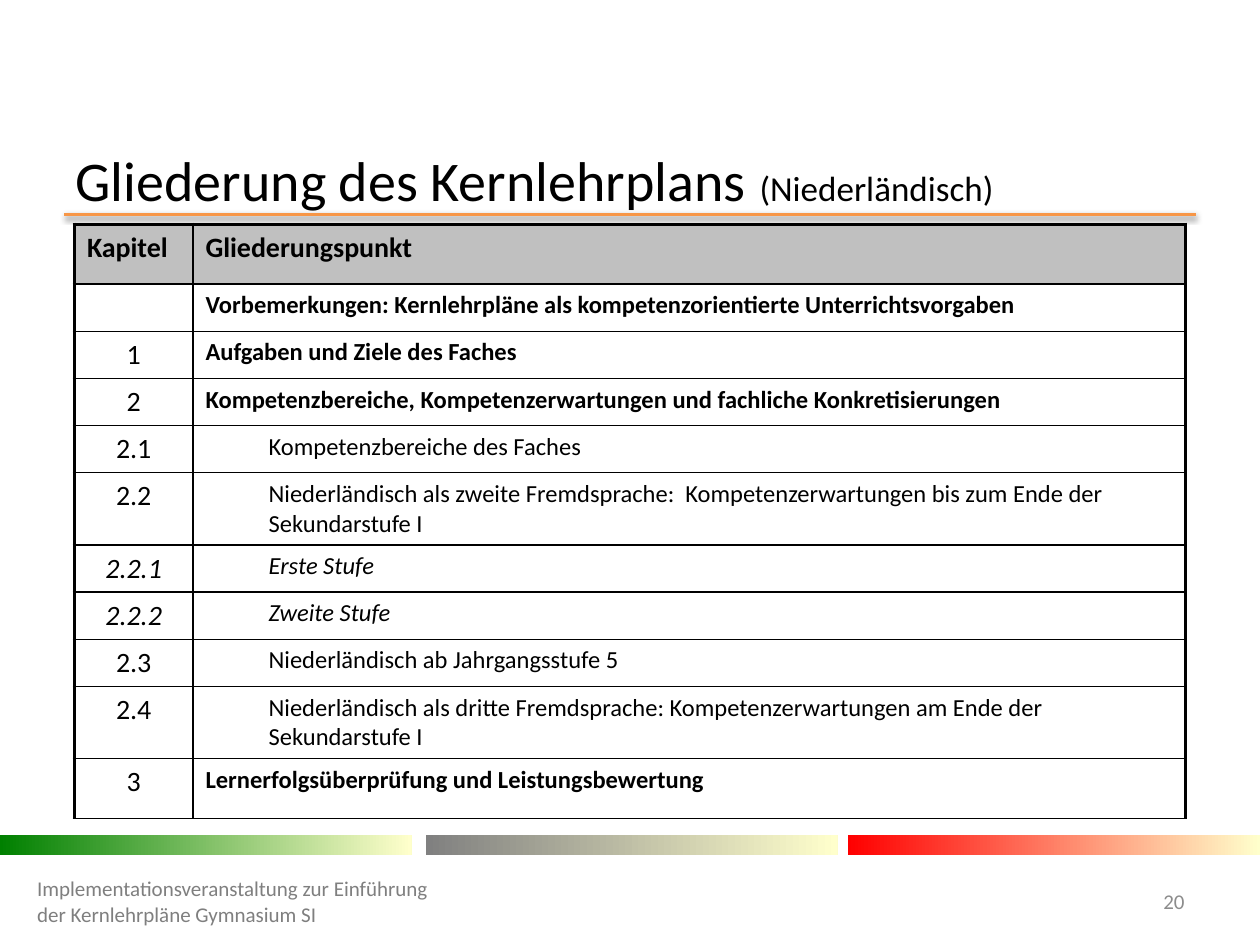
from typing import NamedTuple

from lxml import etree
from pptx import Presentation
from pptx.dml.color import RGBColor
from pptx.enum.shapes import MSO_CONNECTOR, MSO_SHAPE
from pptx.enum.text import MSO_ANCHOR, PP_ALIGN
from pptx.oxml.ns import qn
from pptx.util import Cm, Pt

LEFT, CENTER, RIGHT = PP_ALIGN.LEFT, PP_ALIGN.CENTER, PP_ALIGN.RIGHT
MIDDLE = MSO_ANCHOR.MIDDLE
RECT = MSO_SHAPE.RECTANGLE
LINE = MSO_CONNECTOR.STRAIGHT
FONT = "Calibri"
BLACK, WHITE, GREY = "000000", "FFFFFF", "C0C0C0"
CREAM = "FFFFCC"
THICK, THIN = 2.25, 1
HEAD, ONE, TWO = 1.21, 0.95, 1.45  # row heights in cm


class Row(NamedTuple):
    num: str
    text: str
    high: float = ONE
    sub: bool = False
    slant: bool = False


class Bar(NamedTuple):
    left: float
    start: str
    end: str


ROWS = [
    Row("", "Vorbemerkungen: Kernlehrpläne als kompetenzorientierte "
        "Unterrichtsvorgaben"),
    Row("1", "Aufgaben und Ziele des Faches"),
    Row("2", "Kompetenzbereiche, Kompetenzerwartungen und fachliche "
        "Konkretisierungen"),
    Row("2.1", "Kompetenzbereiche des Faches", sub=True),
    Row("2.2", "Niederländisch als zweite Fremdsprache:  Kompetenzerwartungen "
        "bis zum Ende der Sekundarstufe I", TWO, sub=True),
    Row("2.2.1", "Erste Stufe", sub=True, slant=True),
    Row("2.2.2", "Zweite Stufe", sub=True, slant=True),
    Row("2.3", "Niederländisch ab Jahrgangsstufe 5", sub=True),
    Row("2.4", "Niederländisch als dritte Fremdsprache: Kompetenzerwartungen "
        "am Ende der Sekundarstufe I", TWO, sub=True),
    Row("3", "Lernerfolgsüberprüfung und Leistungsbewertung", HEAD),
]
BARS = [Bar(0, "008000", CREAM), Bar(8.59, "808080", CREAM),
        Bar(17.1, "FF0000", CREAM)]


def color(code: str) -> RGBColor:
    return RGBColor.from_string(code)


def add_run(para, text: str, size: float, tint: str = BLACK,
            bold: bool = False, slant: bool = False) -> None:
    run = para.add_run()
    run.text = text
    font = run.font
    font.name, font.size = FONT, Pt(size)
    font.bold, font.italic = bold, slant
    font.color.rgb = color(tint)


def add_rule(slide) -> None:
    rule = slide.shapes.add_connector(LINE, Cm(1.3), Cm(4.32), Cm(24.1), Cm(4.32))
    rule.line.color.rgb = color("F79646")
    rule.line.width = Pt(2)
    fx = etree.SubElement(rule._element.spPr, qn("a:effectLst"))
    shade = etree.SubElement(fx, qn("a:outerShdw"), blurRad="40000",
                             dist="20000", dir="5400000", rotWithShape="0")
    tint = etree.SubElement(shade, qn("a:srgbClr"), val=BLACK)
    etree.SubElement(tint, qn("a:alpha"), val="38000")


def add_bar(slide, bar: Bar) -> None:
    shape = slide.shapes.add_shape(RECT, Cm(bar.left), Cm(16.84), Cm(8.3), Cm(0.4))
    shape.shadow.inherit = False
    shape.line.fill.background()
    shape.fill.gradient()
    shape.fill.gradient_angle = 0
    for stop, code in zip(shape.fill.gradient_stops, (bar.start, bar.end)):
        stop.color.rgb = color(code)


def add_note(slide, left: float, wide: float, text: str, tint: str, align) -> None:
    box = slide.shapes.add_textbox(Cm(left), Cm(17.66), Cm(wide), Cm(1.01))
    frame = box.text_frame
    frame.word_wrap = True
    frame.vertical_anchor = MIDDLE
    para = frame.paragraphs[0]
    para.alignment = align
    add_run(para, text, 12, tint)


def style_cell(cell, fill: str, left: float, right: float, top: float) -> None:
    # Borders must come before the fill in the cell properties
    props = cell._tc.get_or_add_tcPr()
    for side, width in zip("LRTB", (left, right, top, THIN)):
        edge = etree.SubElement(props, qn(f"a:ln{side}"), w=str(Pt(width)))
        solid = etree.SubElement(edge, qn("a:solidFill"))
        etree.SubElement(solid, qn("a:srgbClr"), val=BLACK)
    cell.fill.solid()
    cell.fill.fore_color.rgb = color(fill)


def fill_row(table, at: int, row: Row) -> None:
    table.rows[at].height = Cm(row.high)
    num, text = table.cell(at, 0), table.cell(at, 1)
    top = at == 0
    fill, edge = (GREY, THICK) if top else (WHITE, THIN)
    style_cell(num, fill, THICK, THIN, edge)
    style_cell(text, fill, THIN, THICK, edge)

    para = num.text_frame.paragraphs[0]
    para.alignment = LEFT if top else CENTER
    if row.num:
        add_run(para, row.num, 16, bold=top, slant=row.slant)
    else:
        para.font.size = Pt(16)

    para = text.text_frame.paragraphs[0]
    if row.sub:
        para.level = 1
        para._p.get_or_add_pPr().set("marL", str(Cm(1.27)))
    add_run(para, row.text, 16 if top else 14, bold=not row.sub, slant=row.slant)


def add_plan(slide) -> None:
    rows = [Row("Kapitel", "Gliederungspunkt", HEAD), *ROWS]
    high = sum(row.high for row in rows)
    table = slide.shapes.add_table(len(rows), 2, Cm(1.5), Cm(4.52),
                                   Cm(22.4), Cm(high)).table
    table.first_row = table.horz_banding = False
    for col, wide in zip(table.columns, (2.39, 20.01)):
        col.width = Cm(wide)
    for at, row in enumerate(rows):
        fill_row(table, at, row)


def add_title(slide) -> None:
    title = slide.shapes.title
    title.left, title.top = Cm(1.27), Cm(3.12)
    title.width, title.height = Cm(22.86), Cm(1)
    title.text_frame.vertical_anchor = MIDDLE
    para = title.text_frame.paragraphs[0]
    para.alignment = LEFT
    add_run(para, "Gliederung des Kernlehrplans ", 32)
    add_run(para, "(Niederländisch)", 20)


def main() -> None:
    deck = Presentation()
    deck.slide_width, deck.slide_height = Cm(25.4), Cm(19.05)
    slide = deck.slides.add_slide(deck.slide_layouts[5])

    # Frame of the page
    add_rule(slide)
    for bar in BARS:
        add_bar(slide, bar)

    # Content
    add_title(slide)
    add_plan(slide)

    # Footer
    add_note(slide, 0.5, 8.4, "Implementationsveranstaltung zur Einführung "
             "der Kernlehrpläne Gymnasium SI", "7F7F7F", LEFT)
    add_note(slide, 22.5, 1.63, "20", "8C8C8C", RIGHT)

    deck.save("out.pptx")


if __name__ == "__main__":
    main()
